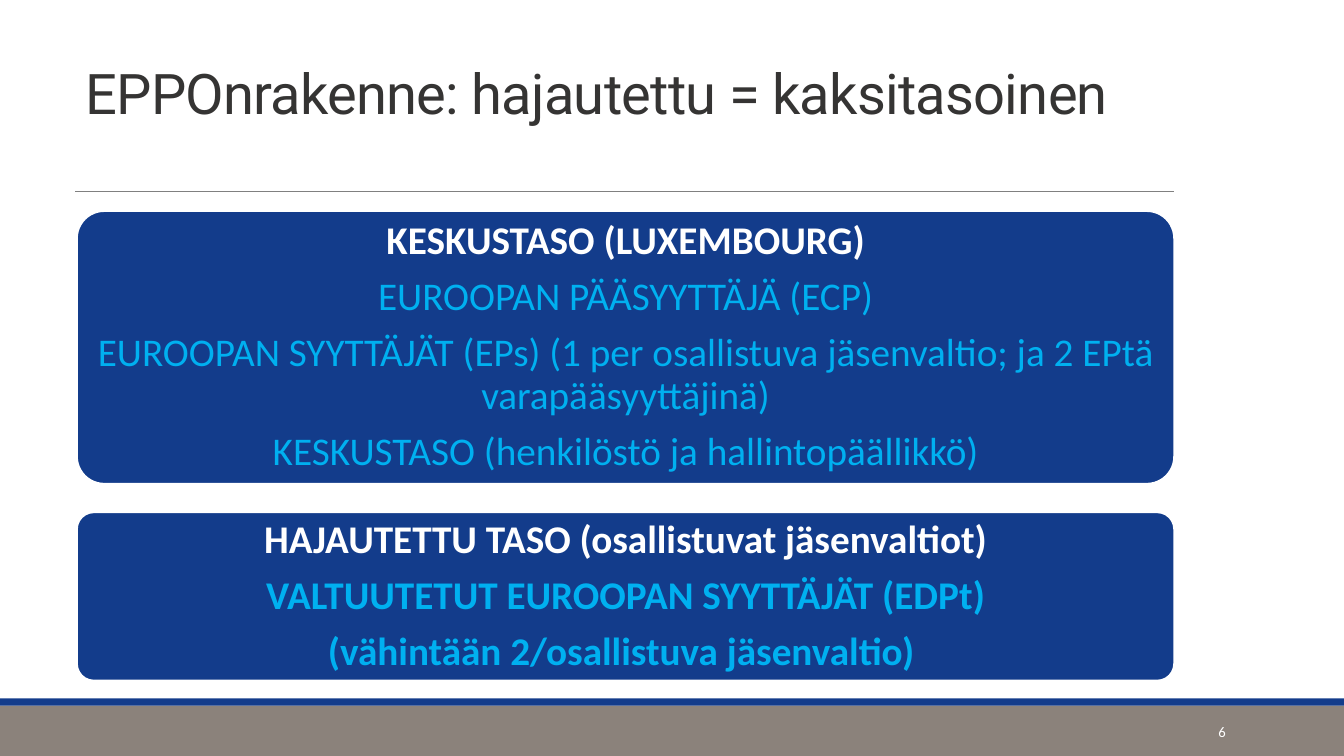
from dataclasses import dataclass
from typing import Any

from pptx import Presentation
from pptx.dml.color import RGBColor
from pptx.enum.shapes import MSO_CONNECTOR as Connector, MSO_SHAPE as Shape
from pptx.enum.text import MSO_ANCHOR as Anchor, MSO_AUTO_SIZE as AutoSize, PP_ALIGN as Align
from pptx.oxml.ns import qn
from pptx.util import Cm, Pt


@dataclass(frozen=True)
class Theme:
    navy: str = "133C8B"
    taupe: str = "8B827B"
    rule: str = "808080"
    ink: str = "353433"
    white: str = "FFFFFF"
    cyan: str = "00B0F0"
    title_font: str = "Roboto"
    body_font: str = "Calibri"
    title_size: float = 40
    body_size: float = 28
    number_size: float = 10.5


@dataclass(frozen=True)
class Box:
    """Position and size in centimetres."""
    left: float
    top: float
    width: float
    height: float

    def emu(self) -> tuple[Cm, Cm, Cm, Cm]:
        return Cm(self.left), Cm(self.top), Cm(self.width), Cm(self.height)


@dataclass(frozen=True)
class Band:
    box: Box
    color: str


@dataclass(frozen=True)
class Level:
    """A tier of the office: a heading and the roles below it."""
    box: Box
    heading: str
    roles: tuple[str, ...]
    bold_roles: bool


THEME = Theme()
WIDTH, HEIGHT = 33.87, 19.05
LEFT, PANEL_LEFT, PANEL_WIDTH = 1.9, 1.94, 27.65

BANDS = (
    Band(Box(0, 17.78, WIDTH, 1.27), THEME.taupe),
    Band(Box(0, 17.6, WIDTH, 0.18), THEME.navy),
)
LEVELS = (
    Level(
        Box(PANEL_LEFT, 5.32, PANEL_WIDTH, 6.87),
        "KESKUSTASO (LUXEMBOURG)",
        (
            "EUROOPAN PÄÄSYYTTÄJÄ (ECP)",
            "EUROOPAN SYYTTÄJÄT (EPs) (1 per osallistuva jäsenvaltio; ja 2 EPtä varapääsyyttäjinä)",
            "KESKUSTASO (henkilöstö ja hallintopäällikkö)",
        ),
        False,
    ),
    Level(
        Box(PANEL_LEFT, 12.91, PANEL_WIDTH, 4.24),
        "HAJAUTETTU TASO (osallistuvat jäsenvaltiot)",
        (
            "VALTUUTETUT EUROOPAN SYYTTÄJÄT (EDPt)",
            "(vähintään 2/osallistuva jäsenvaltio) ",
        ),
        True,
    ),
)


def apply(target: Any, values: dict[str, Any]) -> None:
    for name, value in values.items():
        setattr(target, name, value)


def write(p: Any, text: str, font: str, size: float, color: str, bold: bool = False) -> Any:
    r = p.add_run()
    r.text = text
    apply(r.font, {"name": font, "size": Pt(size), "bold": bold})
    r.font.color.rgb = RGBColor.from_string(color)
    return r


def add_filled(s: Any, kind: Shape, box: Box, color: str) -> Any:
    sp = s.shapes.add_shape(kind, *box.emu())
    sp.shadow.inherit = False
    sp.fill.solid()
    sp.fill.fore_color.rgb = RGBColor.from_string(color)
    sp.line.fill.background()
    return sp


def add_rule(s: Any) -> None:
    line = s.shapes.add_connector(Connector.STRAIGHT, Cm(LEFT), Cm(4.83), Cm(29.59), Cm(4.83))
    line.line.color.rgb = RGBColor.from_string(THEME.rule)
    line.line.width = Pt(0.5)
    sp_pr = line._element.spPr
    sp_pr.append(sp_pr.makeelement(qn("a:effectLst"), {}))


def add_title(s: Any, text: str) -> None:
    sp = s.shapes.title
    sp.left, sp.top, sp.width, sp.height = Box(LEFT, 0.66, 27.69, 4.04).emu()
    tf = sp.text_frame
    apply(tf, {"vertical_anchor": Anchor.BOTTOM, "margin_bottom": Cm(1.53),
               "word_wrap": True, "auto_size": AutoSize.NONE})
    p = tf.paragraphs[0]
    apply(p, {"alignment": Align.LEFT, "line_spacing": 0.85})
    r = write(p, text, THEME.title_font, THEME.title_size, THEME.ink)
    r._r.get_or_add_rPr().set("spc", "-50")


def add_level(s: Any, level: Level) -> None:
    sp = add_filled(s, Shape.ROUNDED_RECTANGLE, level.box, THEME.navy)
    sp.adjustments[0] = 0.1
    sp.line.color.rgb = RGBColor.from_string(THEME.white)
    sp.line.width = Pt(1.25)
    tf = sp.text_frame
    apply(tf, {"word_wrap": True, "vertical_anchor": Anchor.MIDDLE})
    apply(tf, {f"margin_{side}": Cm(0.3) for side in ("left", "top", "right", "bottom")})
    lines = [(level.heading, THEME.white, True)]
    lines += [(role, THEME.cyan, level.bold_roles) for role in level.roles]
    for i, (text, color, bold) in enumerate(lines):
        p = tf.add_paragraph() if i else tf.paragraphs[0]
        apply(p, {"alignment": Align.CENTER, "line_spacing": 0.9,
                  "space_after": Pt(0.35 * THEME.body_size)})
        write(p, text, THEME.body_font, THEME.body_size, color, bold)


def add_number(s: Any, number: str) -> None:
    tf = s.shapes.add_textbox(*Box(27.51, 17.93, 3.63, 1.02).emu()).text_frame
    apply(tf, {"word_wrap": True, "vertical_anchor": Anchor.MIDDLE})
    p = tf.paragraphs[0]
    p.alignment = Align.RIGHT
    write(p, number, THEME.body_font, THEME.number_size, THEME.white)


def main() -> None:
    prs = Presentation()
    apply(prs, {"slide_width": Cm(WIDTH), "slide_height": Cm(HEIGHT)})
    s = prs.slides.add_slide(prs.slide_layouts[5])
    for band in BANDS:
        add_filled(s, Shape.RECTANGLE, band.box, band.color)
    add_rule(s)
    add_title(s, "EPPOnrakenne: hajautettu = kaksitasoinen")
    for level in LEVELS:
        add_level(s, level)
    add_number(s, "6")
    prs.save("out.pptx")


if __name__ == "__main__":
    main()
